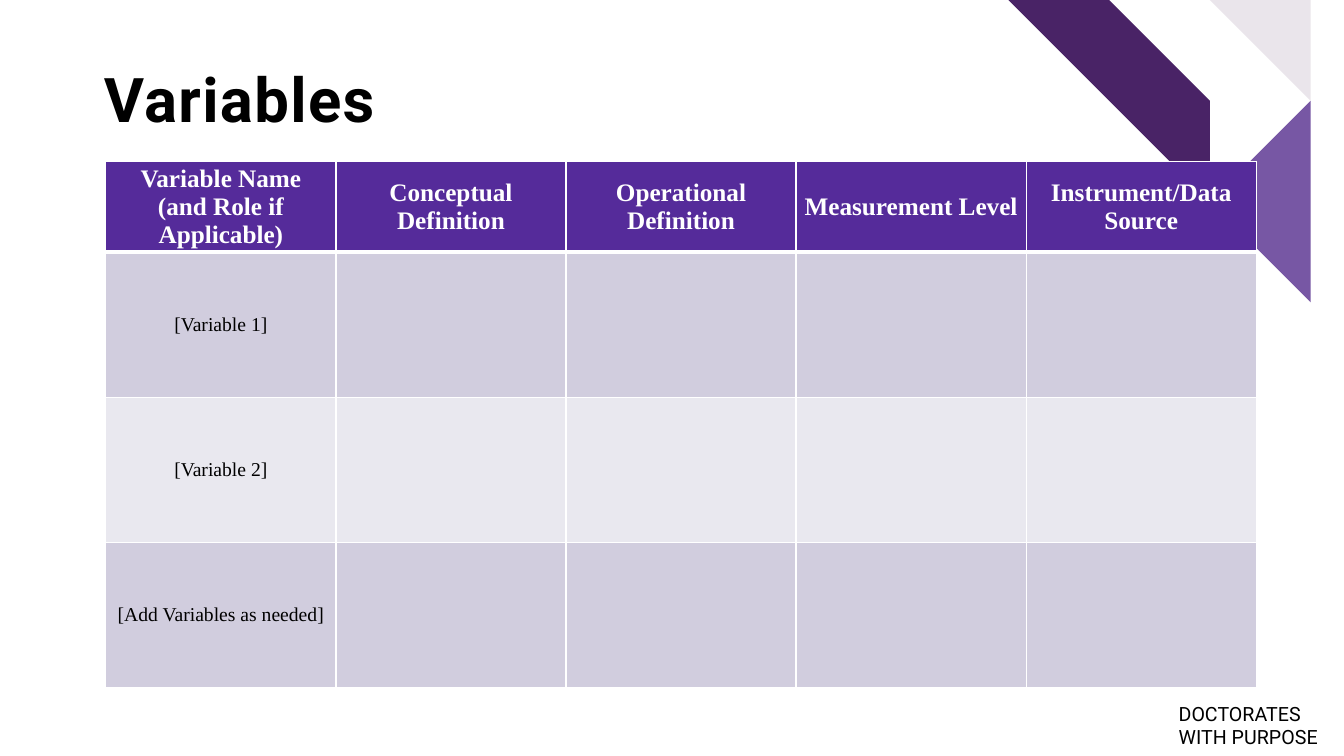
from lxml.etree import SubElement
from pptx import Presentation
from pptx.dml.color import RGBColor
from pptx.enum.text import MSO_ANCHOR, PP_ALIGN
from pptx.oxml.ns import qn
from pptx.util import Inches, Pt

THEME = {
    "dark": "492366", "pale": "EAE5EB", "violet": "7757A4",
    "header": "552B9A", "bands": ("D1CDDE", "E9E8EF"),
    "white": "FFFFFF", "black": "000000",
    "sans": "Roboto", "serif": "Times New Roman",
    "title": 44, "head": 18, "body": 14,
}
W, H = 13.33, 7.5


def add_run(p, text, font, size, color, bold=False):
    r = p.add_run()
    r.text = text
    r.font.name, r.font.size, r.font.bold = font, Pt(size), bold
    r.font.color.rgb = RGBColor.from_string(THEME[color])
    return r


def add_box(s, x, y, w, h, anchor):
    tf = s.shapes.add_textbox(Inches(x), Inches(y), Inches(w), Inches(h)).text_frame
    tf.margin_left = tf.margin_right = tf.margin_top = tf.margin_bottom = 0
    tf.word_wrap = True
    tf.vertical_anchor = anchor
    return tf.paragraphs[0]


prs = Presentation()
prs.slide_width, prs.slide_height = Inches(W), Inches(H)
s = prs.slides.add_slide(prs.slide_layouts[6])

# Corner decoration
corner = [
    ("dark", [(10.1, 0), (11.19, 0), (12.27, 1.09), (11.73, 1.63)]),
    ("pale", [(12.27, 0), (W, 0), (W, 1.06)]),
    ("violet", [(W, 3.24), (12.27, 2.18), (W, 1.12)]),
]
for color, points in corner:
    fb = s.shapes.build_freeform(*points[0], scale=Inches(1))
    fb.add_line_segments(points[1:], close=True)
    sp = fb.convert_to_shape()
    sp.shadow.inherit = False
    sp.fill.solid()
    sp.fill.fore_color.rgb = RGBColor.from_string(THEME[color])
    sp.line.fill.background()

# Title
p = add_box(s, 1.03, 0.68, 5.4, 0.67, MSO_ANCHOR.BOTTOM)
p.line_spacing = 0.9
r = add_run(p, "Variables", THEME["sans"], THEME["title"], "black", True)
r.font._element.set("spc", "100")

# Variables table
headings = ["Variable Name (and Role if Applicable)", "Conceptual Definition",
            "Operational Definition", "Measurement Level", "Instrument/Data Source"]
variables = ["[Variable 1]", "[Variable 2]", "[Add Variables as needed]"]
rows = [headings] + [[v] + [""] * (len(headings) - 1) for v in variables]
heights = [0.77] + [1.44] * len(variables)
table = s.shapes.add_table(len(rows), len(headings), Inches(1.05), Inches(1.6),
                           Inches(11.41), Inches(sum(heights))).table

for i, row in enumerate(rows):
    table.rows[i].height = Inches(heights[i])
    head = i == 0
    fill = THEME["header"] if head else THEME["bands"][(i - 1) % 2]
    for j, text in enumerate(row):
        cell = table.cell(i, j)
        cell.margin_left = cell.margin_right = Inches(0.07)
        cell.margin_top = cell.margin_bottom = 0
        cell.vertical_anchor = MSO_ANCHOR.MIDDLE
        # White borders, heavier between the header and the body
        tcPr = cell._tc.get_or_add_tcPr()
        for side in "LRTB":
            heavy = (head and side == "B") or (i == 1 and side == "T")
            ln = SubElement(tcPr, qn(f"a:ln{side}"), w=str(Pt(3 if heavy else 1)))
            solid = SubElement(ln, qn("a:solidFill"))
            SubElement(solid, qn("a:srgbClr"), val=THEME["white"])
        cell.fill.solid()
        cell.fill.fore_color.rgb = RGBColor.from_string(fill)
        if text:
            p = cell.text_frame.paragraphs[0]
            p.alignment = PP_ALIGN.CENTER
            add_run(p, text, THEME["serif"], THEME["head" if head else "body"],
                    "white" if head else "black", head)

# Motto
p = add_box(s, 11.69, 6.96, 1.44, 0.37, MSO_ANCHOR.TOP)
add_run(p, "DOCTORATES WITH PURPOSE", THEME["sans"], THEME["body"], "black")

prs.save("out.pptx")
